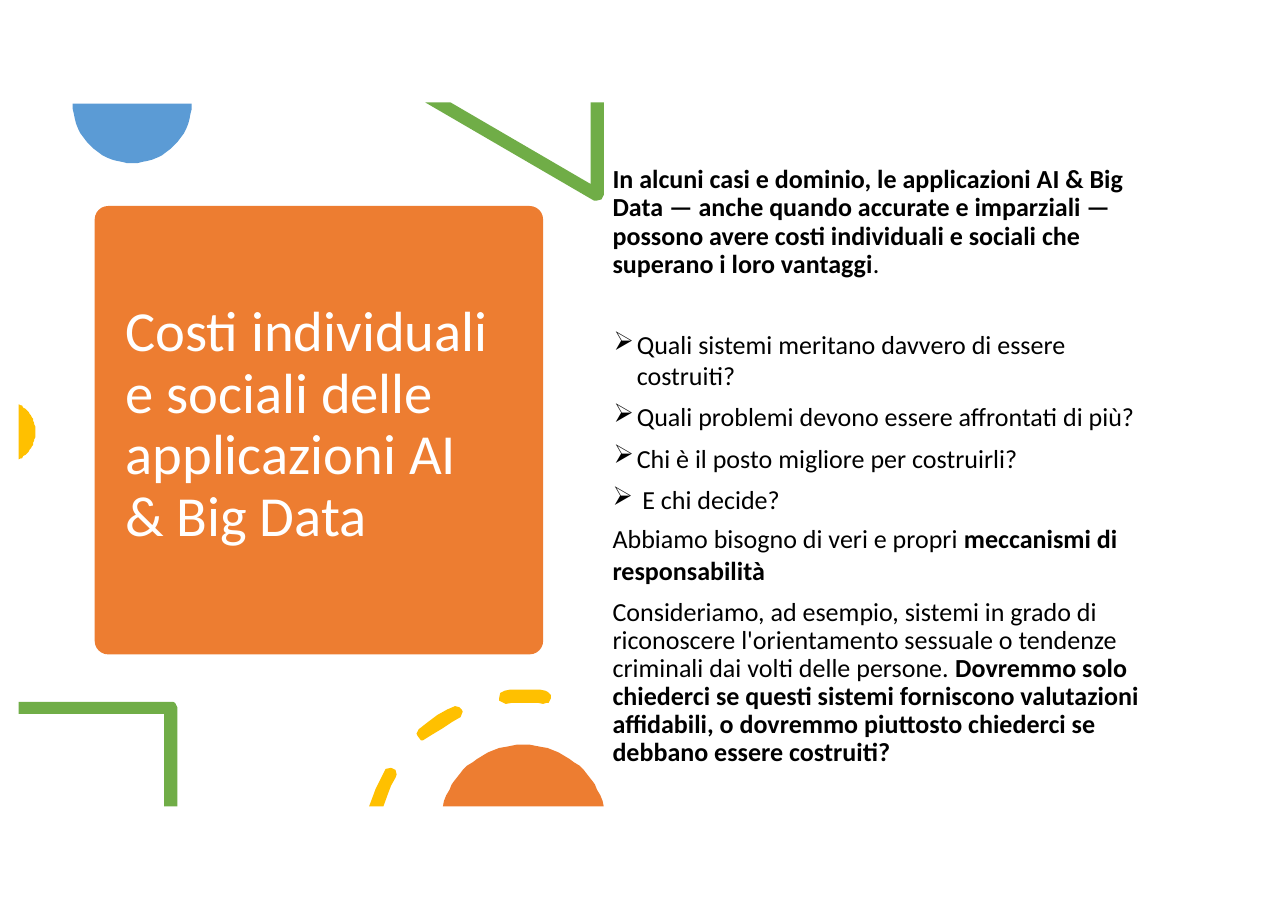
import math
from dataclasses import dataclass

import pptx
import pptx.dml.color
import pptx.enum.shapes
import pptx.enum.text
import pptx.oxml
import pptx.oxml.ns
import pptx.shapes.base
import pptx.slide
import pptx.util

RGBColor = pptx.dml.color.RGBColor
ORANGE = RGBColor(0xED, 0x7D, 0x31)
BLUE = RGBColor(0x5B, 0x9B, 0xD5)
GREEN = RGBColor(0x70, 0xAD, 0x47)
YELLOW = RGBColor(0xFF, 0xC0, 0x00)
WHITE = RGBColor(0xFF, 0xFF, 0xFF)
BLACK = RGBColor(0x00, 0x00, 0x00)

EMU_PER_PX = 9144
FONT = "Calibri"
Point = tuple[int, int]


@dataclass(frozen=True)
class Segment:
    center: Point
    radius: int
    start_degrees: int
    end_degrees: int
    color: RGBColor


@dataclass(frozen=True)
class Outline:
    contours: list[list[Point]]
    color: RGBColor


@dataclass(frozen=True)
class Span:
    text: str
    bold: bool = False


@dataclass(frozen=True)
class Para:
    spans: list[Span]
    margin: int = 1
    indent: int = 0
    space_before: float = 0
    line_spacing: float = 1.0
    bullet: str = ""


@dataclass(frozen=True)
class TextBox:
    left: int
    top: int
    width: int
    height: int
    inset_top: int
    size: int
    color: RGBColor
    paras: list[Para]


SEGMENTS = [
    Segment((120, 94), 54, 0, 180, BLUE),
    Segment((3, 392), 29, -61, 61, YELLOW),
    Segment((475, 752), 76, 195, 345, ORANGE),
]

OUTLINES = [
    Outline([[(548, 93), (536, 93), (536, 167), (409, 93), (386, 93), (539, 182),
              (542, 182), (546, 181), (547, 179), (548, 177)]], GREEN),
    Outline([[(155, 637), (17, 637), (17, 648), (149, 648), (149, 732), (161, 732),
              (161, 642), (160, 640), (159, 638), (157, 637)]], GREEN),
    Outline([
        [(355, 697), (350, 698), (347, 704), (343, 712), (341, 716), (335, 732),
         (348, 732), (352, 721), (355, 713), (359, 706), (360, 703), (359, 699)],
        [(413, 641), (406, 644), (397, 649), (389, 655), (380, 662), (378, 666),
         (379, 668), (382, 672), (384, 672), (392, 667), (402, 661), (411, 655),
         (418, 651), (420, 646), (419, 644), (417, 642)],
        [(476, 626), (463, 626), (458, 627), (454, 629), (453, 634), (453, 636),
         (455, 637), (459, 639), (465, 638), (488, 638), (493, 639), (496, 638),
         (498, 638), (499, 636), (500, 634), (500, 631), (497, 628), (495, 627),
         (490, 626)],
    ], YELLOW),
]

TITLE = TextBox(113, 267, 346, 232, 7, 37, WHITE, [
    Para([Span("Costi individuali e sociali delle applicazioni AI & Big Data")],
         line_spacing=0.91),
])
INTRO = TextBox(555, 147, 501, 107, 4, 17, BLACK, [
    Para([Span("In alcuni casi e dominio, le applicazioni AI & Big Data — anche quando "
               "accurate e imparziali — possono avere costi individuali e sociali che "
               "superano i loro vantaggi", True), Span(".")], line_spacing=0.9),
])
QUESTIONS = TextBox(555, 288, 506, 354, 10, 17, BLACK, [
    Para([Span("Quali sistemi meritano davvero di essere costruiti?")],
         23, -21, bullet="➢"),
    Para([Span("Quali problemi devono essere affrontati di più?")],
         23, -21, 6.5, bullet="➢"),
    Para([Span("Chi è il posto migliore per costruirli?")],
         23, -21, 6.7, bullet="➢"),
    Para([Span("E chi decide?")], 28, -27, 6.5, bullet="➢"),
    Para([Span("Abbiamo bisogno di veri e propri "),
          Span("meccanismi di responsabilità", True)], space_before=5.5),
    Para([Span("Consideriamo, ad esempio, sistemi in grado di riconoscere "
               "l'orientamento sessuale o tendenze criminali dai volti delle persone. "),
          Span("Dovremmo solo chiederci se questi sistemi forniscono valutazioni "
               "affidabili, o dovremmo piuttosto chiederci se debbano essere "
               "costruiti?", True)], space_before=8.8, line_spacing=0.9),
])


def px(length: int) -> pptx.util.Emu:
    return pptx.util.Emu(length * EMU_PER_PX)


def paint(shape: pptx.shapes.base.BaseShape, color: RGBColor) -> None:
    shape.shadow.inherit = False
    shape.fill.solid()
    shape.fill.fore_color.rgb = color
    shape.line.fill.background()


def draw_outline(page: pptx.slide.Slide, outline: Outline) -> None:
    first, *others = outline.contours
    builder = page.shapes.build_freeform(*first[0], scale=EMU_PER_PX)
    builder.add_line_segments(first[1:], close=True)
    for contour in others:
        builder.move_to(*contour[0])
        builder.add_line_segments(contour[1:], close=True)
    paint(builder.convert_to_shape(), outline.color)


def draw_segment(page: pptx.slide.Slide, segment: Segment) -> None:
    steps = 36
    sweep = segment.end_degrees - segment.start_degrees
    points = []
    for step in range(steps + 1):
        angle = math.radians(segment.start_degrees + sweep * step / steps)
        points.append((round(segment.center[0] + segment.radius * math.cos(angle)),
                       round(segment.center[1] + segment.radius * math.sin(angle))))
    draw_outline(page, Outline([points], segment.color))


def draw_card(page: pptx.slide.Slide) -> None:
    card = page.shapes.add_shape(
        pptx.enum.shapes.MSO_SHAPE.ROUNDED_RECTANGLE, px(86), px(187), px(407), px(407))
    card.adjustments[0] = 0.03
    paint(card, ORANGE)


def draw_text(page: pptx.slide.Slide, box: TextBox) -> None:
    shape = page.shapes.add_textbox(px(box.left), px(box.top), px(box.width), px(box.height))
    frame = shape.text_frame
    frame.word_wrap = True
    frame.auto_size = pptx.enum.text.MSO_AUTO_SIZE.SHAPE_TO_FIT_TEXT
    frame.margin_left = frame.margin_right = frame.margin_bottom = 0
    frame.margin_top = px(box.inset_top)
    for index, para in enumerate(box.paras):
        paragraph = frame.paragraphs[0] if index == 0 else frame.add_paragraph()
        properties = paragraph._p.get_or_add_pPr()
        properties.set("marL", str(px(para.margin)))
        properties.set("indent", str(px(para.indent)))
        if para.bullet:
            bullet = pptx.oxml.parse_xml(
                f'<a:buChar {pptx.oxml.ns.nsdecls("a")} char="{para.bullet}"/>')
            properties.append(bullet)
        paragraph.space_before = pptx.util.Pt(para.space_before)
        paragraph.line_spacing = para.line_spacing
        for span in para.spans:
            run = paragraph.add_run()
            run.text = span.text
            run.font.name = FONT
            run.font.size = pptx.util.Pt(box.size)
            run.font.bold = span.bold
            run.font.color.rgb = box.color


def main() -> None:
    deck = pptx.Presentation()
    deck.slide_width = px(1169)
    deck.slide_height = px(826)
    page = deck.slides.add_slide(deck.slide_layouts[6])
    draw_card(page)
    for outline in OUTLINES:
        draw_outline(page, outline)
    for segment in SEGMENTS:
        draw_segment(page, segment)
    for box in (TITLE, INTRO, QUESTIONS):
        draw_text(page, box)
    deck.save("out.pptx")


if __name__ == "__main__":
    main()
